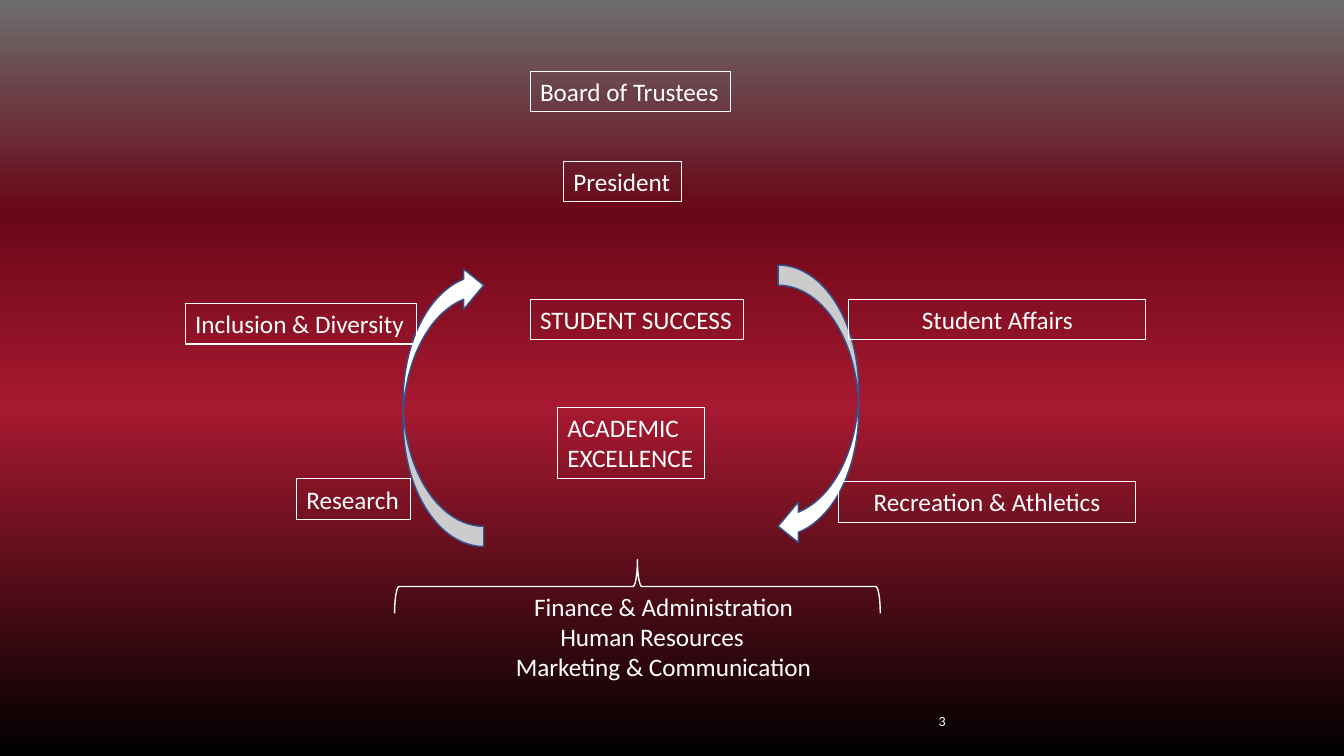
import copy
from dataclasses import dataclass

import pptx
import pptx.dml.color
import pptx.enum.shapes
import pptx.enum.text
import pptx.oxml.ns
import pptx.slide
import pptx.util

Cm = pptx.util.Cm
Pt = pptx.util.Pt
Align = pptx.enum.text.PP_ALIGN
Preset = pptx.enum.shapes.MSO_SHAPE

COLORS = {
    "white": "FFFFFF",
    "arrow_edge": "325491",
    "gray": "6D6D6D",
    "maroon": "690717",
    "crimson": "A71930",
    "black": "000000",
}
BACKGROUND_STOPS = [(0, "gray"), (0.28, "maroon"), (0.54, "crimson"), (1, "black")]


@dataclass
class Label:
    text: str
    left: float
    top: float
    width: float
    height: float = 1.02
    boxed: bool = True
    wrap: bool = False
    grow: bool = True
    align: Align = Align.LEFT
    size: int = 18
    anchor: pptx.enum.text.MSO_ANCHOR = pptx.enum.text.MSO_ANCHOR.TOP


@dataclass
class Figure:
    preset: Preset
    left: float
    top: float
    width: float
    height: float
    line: str
    fill: str = ""
    rotation: int = 0


LABELS = [
    Label("Board of Trustees", 13.36, 1.8, 5.05),
    Label("President", 14.2, 4.06, 2.97),
    Label("STUDENT SUCCESS", 13.36, 7.54, 5.38),
    Label("ACADEMIC\nEXCELLENCE", 14.05, 10.26, 3.71, 1.8),
]
FIGURES = [
    Figure(Preset.CURVED_LEFT_ARROW, 19.61, 6.68, 2.03, 7.09, "arrow_edge", "white"),
    Figure(Preset.CURVED_LEFT_ARROW, 10.16, 6.68, 2.03, 7.09, "arrow_edge", "white", 180),
    Figure(Preset.RIGHT_BRACE, 15.39, 8.66, 1.35, 12.24, "white", rotation=270),
]
DIVISIONS = [
    Label("Recreation & Athletics", 21.13, 12.14, 7.49, wrap=True, align=Align.CENTER),
    Label("Research", 7.47, 12.07, 2.87),
    Label("Student Affairs", 21.39, 7.54, 7.49, wrap=True, align=Align.CENTER),
    Label("Inclusion & Diversity", 4.67, 7.65, 5.84),
    Label("Finance & Administration", 13.21, 14.78, 7.11, boxed=False),
    Label("Human Resources", 13.87, 15.52, 5.21, boxed=False),
    Label("Marketing & Communication", 12.75, 16.28, 8.05, boxed=False),
    Label("3", 18.16, 17.65, 5.92, boxed=False, wrap=True, grow=False,
          align=Align.RIGHT, size=10, anchor=pptx.enum.text.MSO_ANCHOR.MIDDLE),
]


def rgb(name: str) -> pptx.dml.color.RGBColor:
    return pptx.dml.color.RGBColor.from_string(COLORS[name])


def paint_background(slide: pptx.slide.Slide) -> None:
    fill = slide.background.fill
    fill.gradient()
    fill.gradient_angle = 270
    stop_list = slide.element.find(".//" + pptx.oxml.ns.qn("a:gsLst"))
    while len(stop_list) < len(BACKGROUND_STOPS):
        stop_list.append(copy.deepcopy(stop_list[0]))
    for stop, (position, color) in zip(fill.gradient_stops, BACKGROUND_STOPS):
        stop.position = position
        stop.color.rgb = rgb(color)


def draw_label(slide: pptx.slide.Slide, label: Label) -> None:
    shape = slide.shapes.add_textbox(
        Cm(label.left), Cm(label.top), Cm(label.width), Cm(label.height))
    if label.boxed:
        shape.line.color.rgb = rgb("white")
        shape.line.width = Pt(0.75)
    frame = shape.text_frame
    frame.text = label.text
    frame.word_wrap = label.wrap
    frame.vertical_anchor = label.anchor
    if label.grow:
        frame.auto_size = pptx.enum.text.MSO_AUTO_SIZE.SHAPE_TO_FIT_TEXT
    for paragraph in frame.paragraphs:
        paragraph.alignment = label.align
        paragraph.font.name = "Calibri"
        paragraph.font.size = Pt(label.size)
        paragraph.font.color.rgb = rgb("white")


def draw_figure(slide: pptx.slide.Slide, figure: Figure) -> None:
    shape = slide.shapes.add_shape(
        figure.preset, Cm(figure.left), Cm(figure.top),
        Cm(figure.width), Cm(figure.height))
    shape.shadow.inherit = False
    shape.rotation = figure.rotation
    shape.line.color.rgb = rgb(figure.line)
    shape.line.width = Pt(1)
    if figure.fill:
        shape.fill.solid()
        shape.fill.fore_color.rgb = rgb(figure.fill)
    else:
        shape.fill.background()


def main() -> None:
    presentation = pptx.Presentation()
    presentation.slide_width = Cm(33.87)
    presentation.slide_height = Cm(19.05)
    slide = presentation.slides.add_slide(presentation.slide_layouts[6])
    paint_background(slide)
    for label in LABELS:
        draw_label(slide, label)
    for figure in FIGURES:
        draw_figure(slide, figure)
    for label in DIVISIONS:
        draw_label(slide, label)
    presentation.save("out.pptx")


if __name__ == "__main__":
    main()
